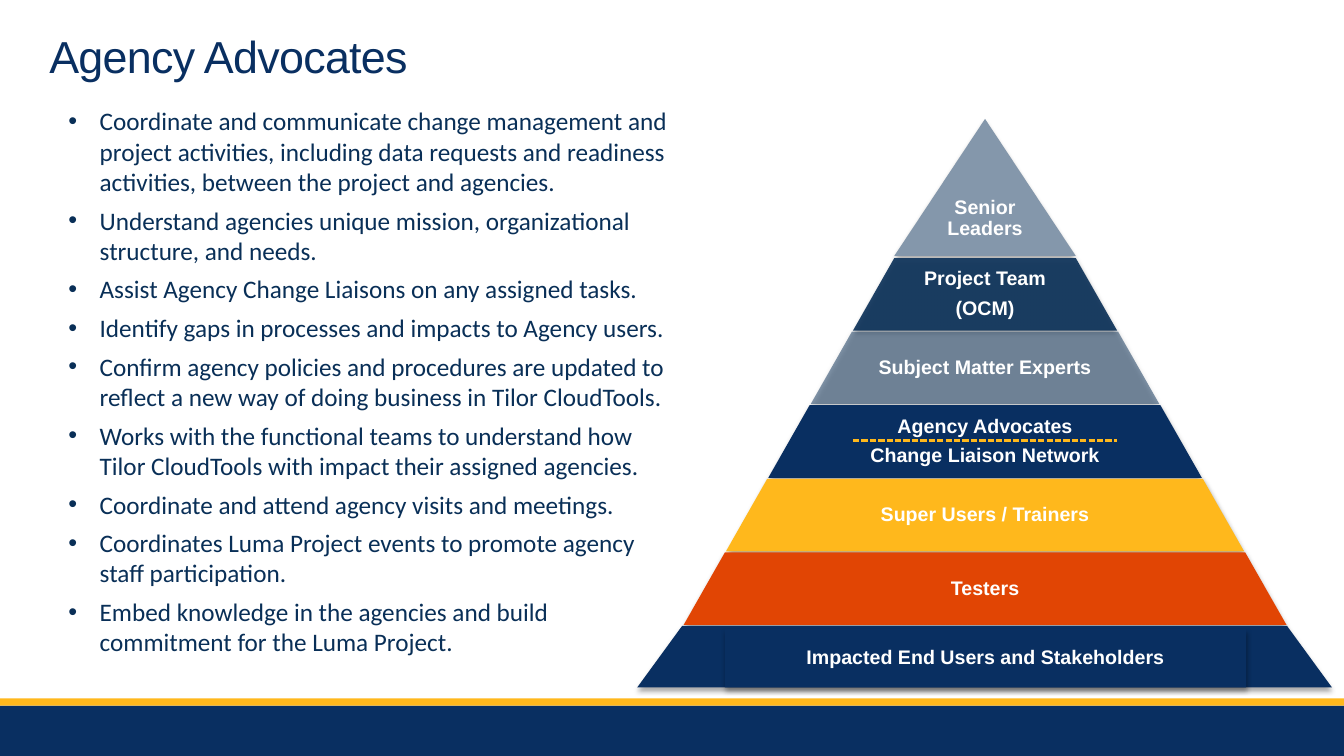
from lxml import etree
from pptx import Presentation
from pptx.dml.color import RGBColor
from pptx.enum.dml import MSO_LINE
from pptx.enum.shapes import MSO_CONNECTOR, MSO_SHAPE
from pptx.enum.text import MSO_ANCHOR, MSO_AUTO_SIZE, PP_ALIGN
from pptx.oxml.ns import qn
from pptx.util import Inches, Pt

NAVY = RGBColor(0x09, 0x2F, 0x61)
DEEP_NAVY = RGBColor(0x09, 0x2F, 0x57)
GOLD = RGBColor(0xFF, 0xB8, 0x1C)
ORANGE = RGBColor(0xE1, 0x45, 0x04)
SLATE = RGBColor(0x84, 0x97, 0xAB)
WHITE = RGBColor(0xFF, 0xFF, 0xFF)
BLACK = RGBColor(0x00, 0x00, 0x00)

DUTIES = [
    "Coordinate and communicate change management and project activities, including "
    "data requests and readiness activities, between the project and agencies.",
    "Understand agencies unique mission, organizational structure, and needs.",
    "Assist Agency Change Liaisons on any assigned tasks.",
    "Identify gaps in processes and impacts to Agency users.",
    "Confirm agency policies and procedures are updated to reflect a new way of doing "
    "business in Tilor CloudTools.",
    "Works with the functional teams to understand how Tilor CloudTools with impact "
    "their assigned agencies.",
    "Coordinate and attend agency visits and meetings.",
    "Coordinates Luma Project events to promote agency staff participation.",
    "Embed knowledge in the agencies and build commitment for the Luma Project.",
]

# Middle tiers: label lines, label width, fill, opacity in percent
TIERS = [
    (["Project Team", "(OCM)"], 1.71, DEEP_NAVY, 90),
    (["Subject Matter Experts"], 2.42, DEEP_NAVY, 50),
    (["Agency Advocates", "Change Liaison Network"], 2.62, NAVY, 100),
    (["Super Users / Trainers"], 2.34, GOLD, 100),
    (["Testers"], 1.04, ORANGE, 100),
]
CENTER = 9.77
TIER_TOP, TIER_PITCH, TIER_HEIGHT = 2.56, 0.73, 0.72
HALF_WIDTH, HALF_GROWTH, SLOPE = 0.9, 0.42, 0.41


class SlideBuilder:
    font, label_size = "Arial", 14

    def __init__(self, slide):
        self.slide = slide

    def paint(self, sp, color, opacity=100, shadow=True):
        sp.fill.solid()
        sp.fill.fore_color.rgb = color
        sp.line.fill.background()
        sp.shadow.inherit = False
        if opacity < 100:
            clr = sp._element.spPr.find(qn("a:solidFill"))[0]
            etree.SubElement(clr, qn("a:alpha"), val=str(opacity * 1000))
        if shadow:
            effects = sp._element.spPr.find(qn("a:effectLst"))
            outer = etree.SubElement(effects, qn("a:outerShdw"), blurRad=str(Pt(3.5)),
                                     dist=str(Pt(2.2)), dir="5400000", rotWithShape="0")
            clr = etree.SubElement(outer, qn("a:srgbClr"), val=str(BLACK))
            etree.SubElement(clr, qn("a:alpha"), val="32000")

    def shape(self, kind, x, y, w, h, color, shadow=True):
        sp = self.slide.shapes.add_shape(kind, Inches(x), Inches(y), Inches(w), Inches(h))
        self.paint(sp, color, shadow=shadow)
        return sp

    def tier(self, y, h, half_top, half_bottom, color, opacity=100):
        points = [(CENTER + half_top, y), (CENTER + half_bottom, y + h),
                  (CENTER - half_bottom, y + h)]
        fb = self.slide.shapes.build_freeform(Inches(CENTER - half_top), Inches(y))
        fb.add_line_segments([(Inches(px), Inches(py)) for px, py in points])
        self.paint(fb.convert_to_shape(), color, opacity)

    def textbox(self, x, y, w, h):
        tf = self.slide.shapes.add_textbox(
            Inches(x), Inches(y), Inches(w), Inches(h)).text_frame
        tf.word_wrap = True
        return tf

    def style_run(self, p, size, color, font=None, bold=False):
        for r in p.runs:
            r.font.name = font or self.font
            r.font.size, r.font.bold = Pt(size), bold
            r.font.color.rgb = color

    def label_text(self, tf, lines, margin=0):
        tf.word_wrap = True
        tf.vertical_anchor = MSO_ANCHOR.MIDDLE
        tf.margin_left = tf.margin_right = tf.margin_top = tf.margin_bottom = Inches(margin)
        for i, line in enumerate(lines):
            p = tf.add_paragraph() if i else tf.paragraphs[0]
            p.text = line
            p.alignment, p.line_spacing = PP_ALIGN.CENTER, 0.9
            if i:
                p.space_before = Pt(6)
            self.style_run(p, self.label_size, WHITE, bold=True)

    def label(self, lines, w, h, middle):
        self.label_text(self.textbox(CENTER - w / 2, middle - h / 2, w, h), lines)

    def title(self, text, x, y, w, h):
        tf = self.textbox(x, y, w, h)
        tf.vertical_anchor = MSO_ANCHOR.MIDDLE
        p = tf.paragraphs[0]
        p.text, p.line_spacing = text, 0.85
        self.style_run(p, 32, NAVY)
        p.runs[0]._r.get_or_add_rPr().set("spc", "-50")

    def bullets(self, items, x, y, w, h):
        tf = self.textbox(x, y, w, h)
        tf.auto_size = MSO_AUTO_SIZE.SHAPE_TO_FIT_TEXT
        for i, item in enumerate(items):
            p = tf.add_paragraph() if i else tf.paragraphs[0]
            p.text, p.space_after = item, Pt(6)
            pPr = p._p.get_or_add_pPr()
            pPr.set("marL", str(Inches(0.4)))
            pPr.set("indent", str(Inches(-0.31)))
            etree.SubElement(pPr, qn("a:buFont"), typeface="Arial")
            etree.SubElement(pPr, qn("a:buChar"), char="•")
            self.style_run(p, 18, DEEP_NAVY, "Calibri")

    def dashed_line(self, x1, x2, y):
        line = self.slide.shapes.add_connector(
            MSO_CONNECTOR.STRAIGHT, Inches(x1), Inches(y), Inches(x2), Inches(y))
        line.line.color.rgb, line.line.width = GOLD, Pt(1.5)
        line.line.dash_style = MSO_LINE.SQUARE_DOT
        etree.SubElement(line._element.spPr, qn("a:effectLst"))


def main():
    prs = Presentation()
    prs.slide_width, prs.slide_height = Inches(13.33), Inches(7.5)
    s = SlideBuilder(prs.slides.add_slide(prs.slide_layouts[6]))

    # Footer bands and title
    s.shape(MSO_SHAPE.RECTANGLE, 0, 7, 13.33, 0.5, NAVY, shadow=False)
    s.shape(MSO_SHAPE.RECTANGLE, 0, 6.93, 13.33, 0.07, GOLD, shadow=False)
    s.title("Agency Advocates", 0.39, 0.31, 12.58, 0.56)

    # Pyramid top
    s.tier(1.18, 1.36, 0, 0.9, SLATE)
    s.label(["Senior Leaders"], 0.97, 0.42, 2.17)

    # Pyramid middle tiers
    for i, (lines, width, color, opacity) in enumerate(TIERS):
        y = TIER_TOP + i * TIER_PITCH
        half = HALF_WIDTH + i * HALF_GROWTH
        s.tier(y, TIER_HEIGHT, half, half + SLOPE, color, opacity)
        s.label(lines, width, 0.52 if len(lines) > 1 else 0.21, y + TIER_HEIGHT / 2)

    # Pyramid base
    base = s.shape(MSO_SHAPE.TRAPEZOID, 6.32, 6.21, 6.89, 0.61, NAVY)
    base.adjustments[0] = 0.73
    panel = s.shape(MSO_SHAPE.RECTANGLE, 7.19, 6.24, 5.17, 0.58, NAVY)
    s.label_text(panel.text_frame, ["Impacted End Users and Stakeholders"], margin=0.03)

    # Divider between advocates and liaisons
    s.dashed_line(8.46, 11.08, 4.37)

    # Duties
    s.bullets(DUTIES, 0.49, 1, 6.31, 6.01)

    prs.save("out.pptx")


if __name__ == "__main__":
    main()
